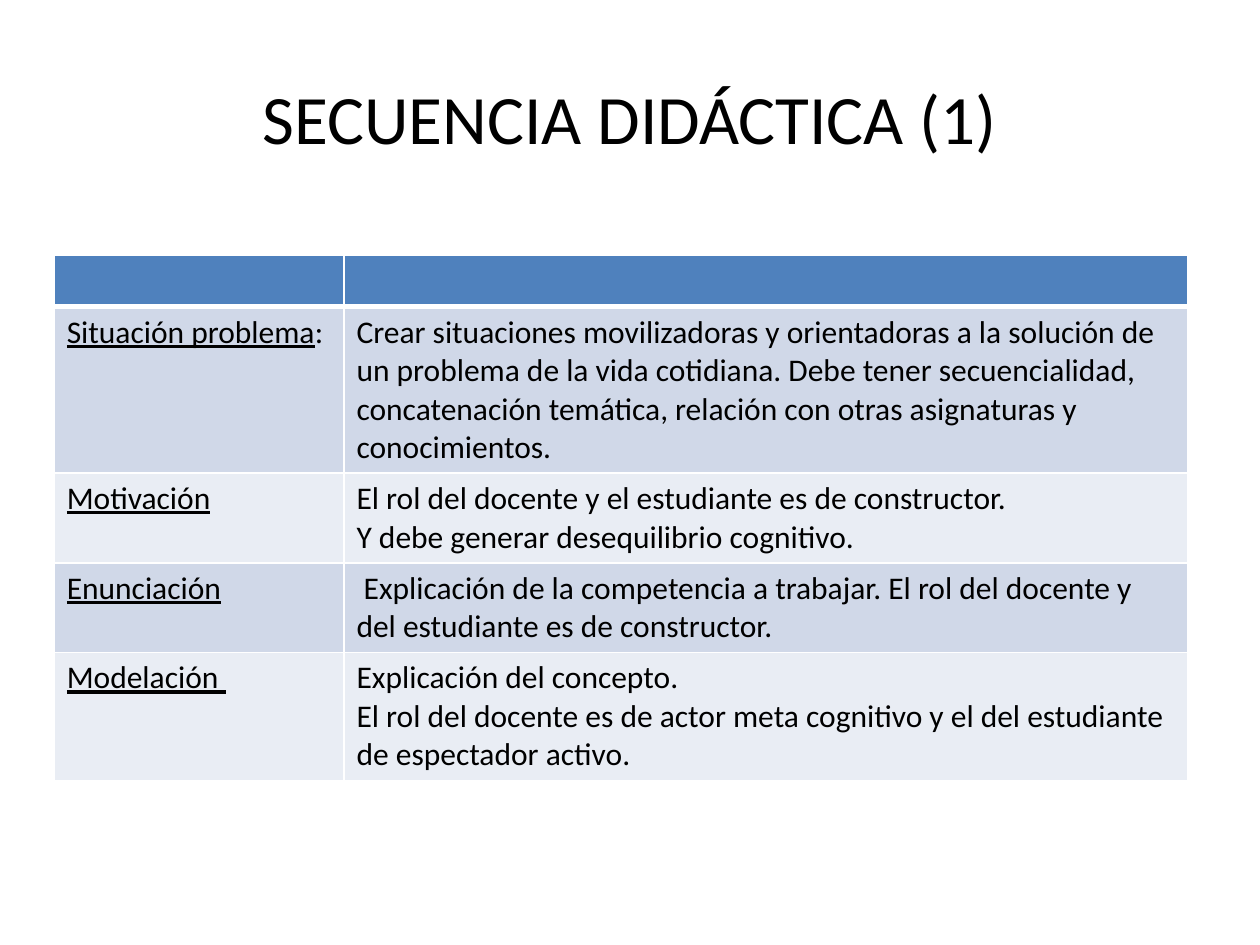
"""Build the slide "SECUENCIA DIDÁCTICA (1)" with its table of teaching steps."""
import dataclasses

import lxml.etree
import pptx
import pptx.dml.color
import pptx.enum.text
import pptx.oxml.ns
import pptx.util


@dataclasses.dataclass(frozen=True)
class Theme:
    font: str = "Calibri"
    title_size: float = 39.6
    body_size: float = 18
    text: str = "000000"
    header: str = "4F81BD"
    bands: tuple = ("D0D8E8", "E9EDF4")
    border: str = "FFFFFF"


def add_run(p, text, size, underline=False):
    """Add one formatted run to a paragraph."""
    r = p.add_run()
    r.text = text
    r.font.name = theme.font
    r.font.size = pptx.util.Pt(size)
    r.font.bold = False
    r.font.underline = underline
    r.font.color.rgb = pptx.dml.color.RGBColor.from_string(theme.text)


def style_cell(cell, color, widths):
    """Give a cell its borders, in points by side, and its fill."""
    tcPr = cell._tc.get_or_add_tcPr()
    for side, width in widths.items():
        ln = lxml.etree.SubElement(tcPr, pptx.oxml.ns.qn(f"a:ln{side}"), w=str(pptx.util.Pt(width)))
        fill = lxml.etree.SubElement(ln, pptx.oxml.ns.qn("a:solidFill"))
        lxml.etree.SubElement(fill, pptx.oxml.ns.qn("a:srgbClr"), val=theme.border)
    cell.fill.solid()
    cell.fill.fore_color.rgb = pptx.dml.color.RGBColor.from_string(color)


theme = Theme()
steps = [
    ("Situación problema", ":", 4, [
        "Crear situaciones movilizadoras y orientadoras a la solución de un problema de la "
        "vida cotidiana. Debe tener secuencialidad, concatenación temática, relación con "
        "otras asignaturas y conocimientos."]),
    ("Motivación", "", 2, [
        "El rol del docente y el estudiante es de constructor.",
        "Y debe generar desequilibrio cognitivo."]),
    ("Enunciación", "", 2, [
        " Explicación de la competencia a trabajar. El rol del docente y del estudiante es "
        "de constructor."]),
    ("Modelación ", "", 3, [
        "Explicación del concepto.",
        "El rol del docente es de actor meta cognitivo y el del estudiante de espectador "
        "activo."]),
]

prs = pptx.Presentation()
prs.slide_width = pptx.util.Inches(10)
prs.slide_height = pptx.util.Inches(7.5)
W, H = prs.slide_width, prs.slide_height
s = prs.slides.add_slide(prs.slide_layouts[5])

title = s.shapes.title
title.left, title.top = int(0.05 * W), int(0.04 * H)
title.width, title.height = int(0.9 * W), int(H / 6)
tf = title.text_frame
tf.word_wrap = True
tf.auto_size = pptx.enum.text.MSO_AUTO_SIZE.NONE
tf.vertical_anchor = pptx.enum.text.MSO_ANCHOR.MIDDLE
p = tf.paragraphs[0]
p.alignment = pptx.enum.text.PP_ALIGN.CENTER
add_run(p, "SECUENCIA DIDÁCTICA (1)", theme.title_size)

header_height = pptx.util.Inches(0.41)
line_height = pptx.util.Pt(1.22 * theme.body_size)
padding = pptx.util.Inches(0.1)
heights = [header_height] + [padding + lines * line_height for _, _, lines, _ in steps]
table = s.shapes.add_table(
    len(heights), 2, int(0.043 * W), int(0.27 * H), int(0.9 * W), sum(heights)).table
table.columns[0].width = int(0.23 * W)
table.columns[1].width = int(0.67 * W)

for i, height in enumerate(heights):
    table.rows[i].height = height
    color = theme.bands[(i - 1) % 2] if i else theme.header
    widths = {"L": 1, "R": 1, "T": 3 if i == 1 else 1, "B": 1 if i else 3}
    for cell in table.rows[i].cells:
        style_cell(cell, color, widths)

for i, (name, suffix, _, sentences) in enumerate(steps, start=1):
    p = table.cell(i, 0).text_frame.paragraphs[0]
    add_run(p, name, theme.body_size, underline=True)
    if suffix:
        add_run(p, suffix, theme.body_size)
    tf = table.cell(i, 1).text_frame
    for j, sentence in enumerate(sentences):
        p = tf.add_paragraph() if j else tf.paragraphs[0]
        add_run(p, sentence, theme.body_size)

prs.save("out.pptx")
